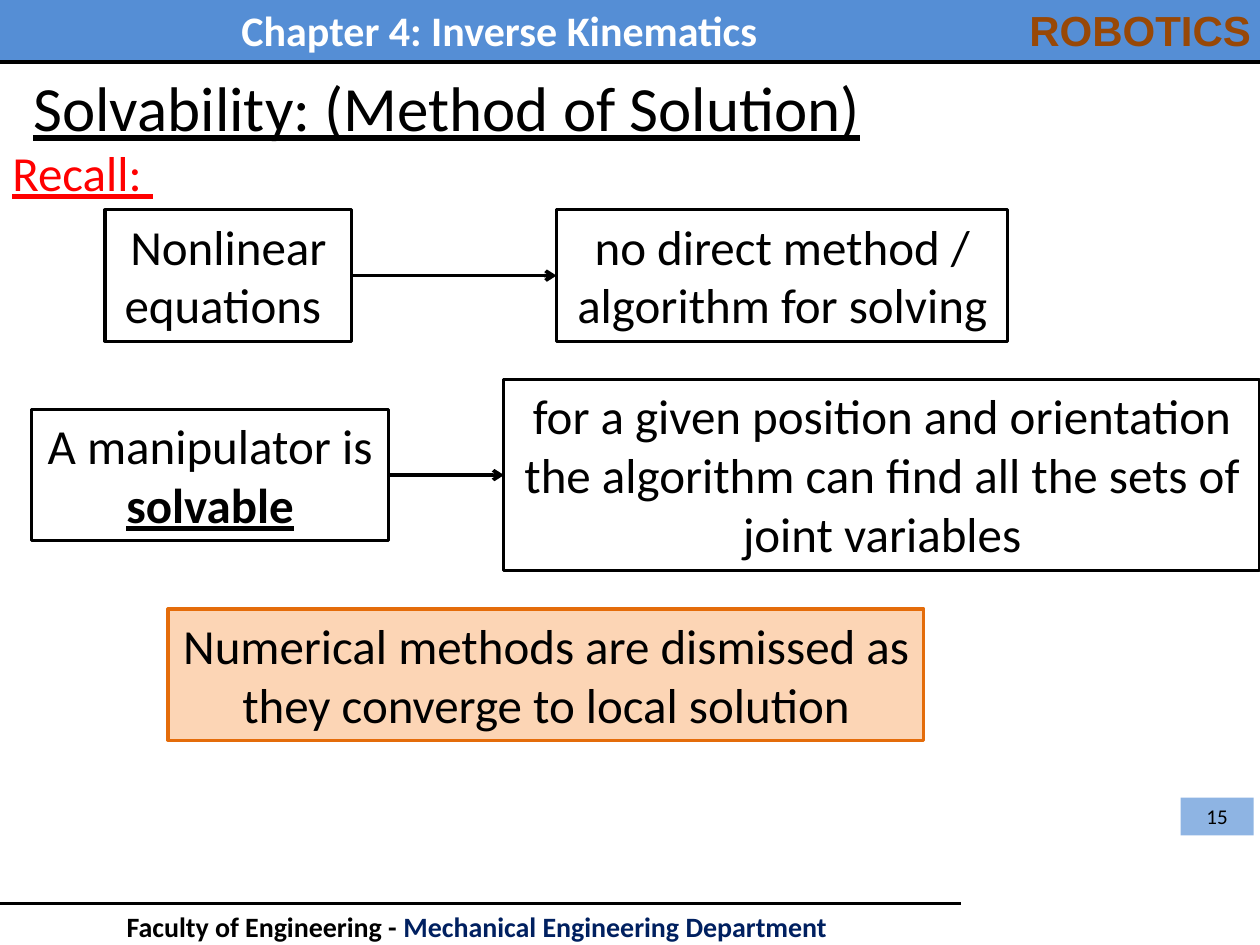
from collections import namedtuple
from dataclasses import dataclass

from lxml.etree import SubElement
from pptx import Presentation
from pptx.dml.color import RGBColor
from pptx.enum.shapes import MSO_CONNECTOR as Connector, MSO_SHAPE as Shape
from pptx.enum.text import MSO_ANCHOR as Anchor, PP_ALIGN as Align
from pptx.oxml.ns import qn
from pptx.util import Pt

Box = namedtuple("Box", "left top width height")


@dataclass(frozen=True)
class Theme:
    font: str = "Calibri"
    brand_font: str = "Arial"
    black: str = "000000"
    white: str = "FFFFFF"
    red: str = "FF0000"
    navy: str = "002060"
    brown: str = "984807"
    banner: str = "558ED5"
    badge: str = "8EB4E3"
    peach: str = "FCD5B5"
    orange: str = "E46C0A"
    title_size: int = 36
    body_size: int = 28
    banner_size: int = 24
    footer_size: int = 16
    number_size: int = 12
    rule_width: float = 2
    border_width: float = 1.75


THEME = Theme()


def rgb(color):
    return RGBColor.from_string(color)


def write(holder, runs, size, color=THEME.black, font=THEME.font, align=Align.CENTER,
          anchor=Anchor.TOP, bold=None, underline=None):
    """Fill a shape with one paragraph and return its runs."""
    frame = holder.text_frame
    frame.word_wrap = True
    frame.vertical_anchor = anchor
    paragraph = frame.paragraphs[0]
    paragraph.alignment = align
    style = paragraph.font
    style.name, style.size, style.bold, style.underline = font, Pt(size), bold, underline
    style.color.rgb = rgb(color)
    for words in runs:
        paragraph.add_run().text = words
    return paragraph.runs


def add_label(slide, box, words, size, **style):
    label = slide.shapes.add_textbox(*map(Pt, box))
    return write(label, words, size, **style)


def add_panel(slide, box, fill=None, border=None):
    panel = slide.shapes.add_shape(Shape.RECTANGLE, *map(Pt, box))
    panel.shadow.inherit = False
    if fill:
        panel.fill.solid()
        panel.fill.fore_color.rgb = rgb(fill)
    else:
        panel.fill.background()
    if border:
        panel.line.color.rgb = rgb(border)
        panel.line.width = Pt(THEME.border_width)
    else:
        panel.line.fill.background()
    return panel


def add_rule(slide, x1, y1, x2, y2):
    rule = slide.shapes.add_connector(Connector.STRAIGHT, Pt(x1), Pt(y1), Pt(x2), Pt(y2))
    rule.line.color.rgb = rgb(THEME.black)
    rule.line.width = Pt(THEME.rule_width)
    SubElement(rule.element.spPr, qn("a:effectLst"))
    return rule


def add_header(slide, box, brand_width):
    chapter_width = box.width - brand_width
    chapter = add_panel(slide, box._replace(width=chapter_width), THEME.banner)
    write(chapter, ["Chapter 4: Inverse Kinematics"], THEME.banner_size, THEME.white, bold=True)
    brand = add_panel(slide, box._replace(left=box.left + chapter_width, width=brand_width),
                      THEME.banner)
    write(brand, ["ROBOTICS"], THEME.banner_size, THEME.brown, THEME.brand_font,
          Align.RIGHT, bold=True)
    bottom = box.top + box.height
    add_rule(slide, 0, bottom, box.left + box.width, bottom)


def add_footer(slide, box):
    _, department = add_label(
        slide, box, ["Faculty of Engineering - ", "Mechanical Engineering Department "],
        THEME.footer_size, bold=True)
    department.font.color.rgb = rgb(THEME.navy)
    add_rule(slide, 0, box.top, box.left + box.width, box.top)


def add_page_number(slide, box, number):
    badge = add_panel(slide, box, THEME.badge)
    write(badge, [number], THEME.number_size, anchor=Anchor.MIDDLE)


def add_implication(slide, box, premise_size, conclusion_size, premise, conclusion):
    """Place two boxes at the ends of a row, centred vertically and joined by an arrow."""
    def centred(left, width, height):
        return Box(left, box.top + (box.height - height) / 2, width, height)

    right = box.left + box.width
    premise_box = add_panel(slide, centred(box.left, *premise_size), border=THEME.black)
    conclusion_box = add_panel(
        slide, centred(right - conclusion_size[0], *conclusion_size), border=THEME.black)
    premise_runs = write(premise_box, premise, THEME.body_size)
    write(conclusion_box, conclusion, THEME.body_size)
    arrow = add_rule(slide, 0, 0, 0, 0)
    arrow.begin_connect(premise_box, 3)
    arrow.end_connect(conclusion_box, 1)
    SubElement(arrow.line._get_or_add_ln(), qn("a:tailEnd"), type="arrow")
    return premise_runs


def add_conclusion(slide, box):
    callout = add_panel(slide, box, THEME.peach, THEME.orange)
    write(callout, ["Numerical methods are dismissed as they converge to local solution"],
          THEME.body_size)


def main():
    deck = Presentation()
    deck.slide_width, deck.slide_height = Pt(720), Pt(540)
    slide = deck.slides.add_slide(deck.slide_layouts[6])
    two_lines, three_lines = 75, 109

    add_header(slide, Box(-0.7, -0.7, 722.7, 36), brand_width=150.5)
    add_footer(slide, Box(-0.7, 516.2, 550, 26.6))
    add_label(slide, Box(12, 35.3, 708, 51), ["Solvability: (Method of Solution)"],
              THEME.title_size, align=Align.LEFT, anchor=Anchor.MIDDLE, underline=True)
    add_label(slide, Box(0, 78, 714, 438), ["Recall: "], THEME.body_size,
              color=THEME.red, align=Align.JUSTIFY, underline=True)
    add_page_number(slide, Box(674.6, 455.8, 41.8, 21.6), "15")

    add_implication(slide, Box(60, 120, 516, two_lines), (141, two_lines), (258, two_lines),
                    ["Nonlinear equations "], ["no direct method / algorithm for solving"])
    _, solvable = add_implication(
        slide, Box(18, 217, 702, three_lines), (204, two_lines), (432, three_lines),
        ["A manipulator is ", "solvable"],
        ["for a given position and orientation the algorithm can find "
         "all the sets of joint variables"])
    solvable.font.bold = solvable.font.underline = True
    add_conclusion(slide, Box(96, 348, 432, two_lines))

    deck.save("out.pptx")


if __name__ == "__main__":
    main()
